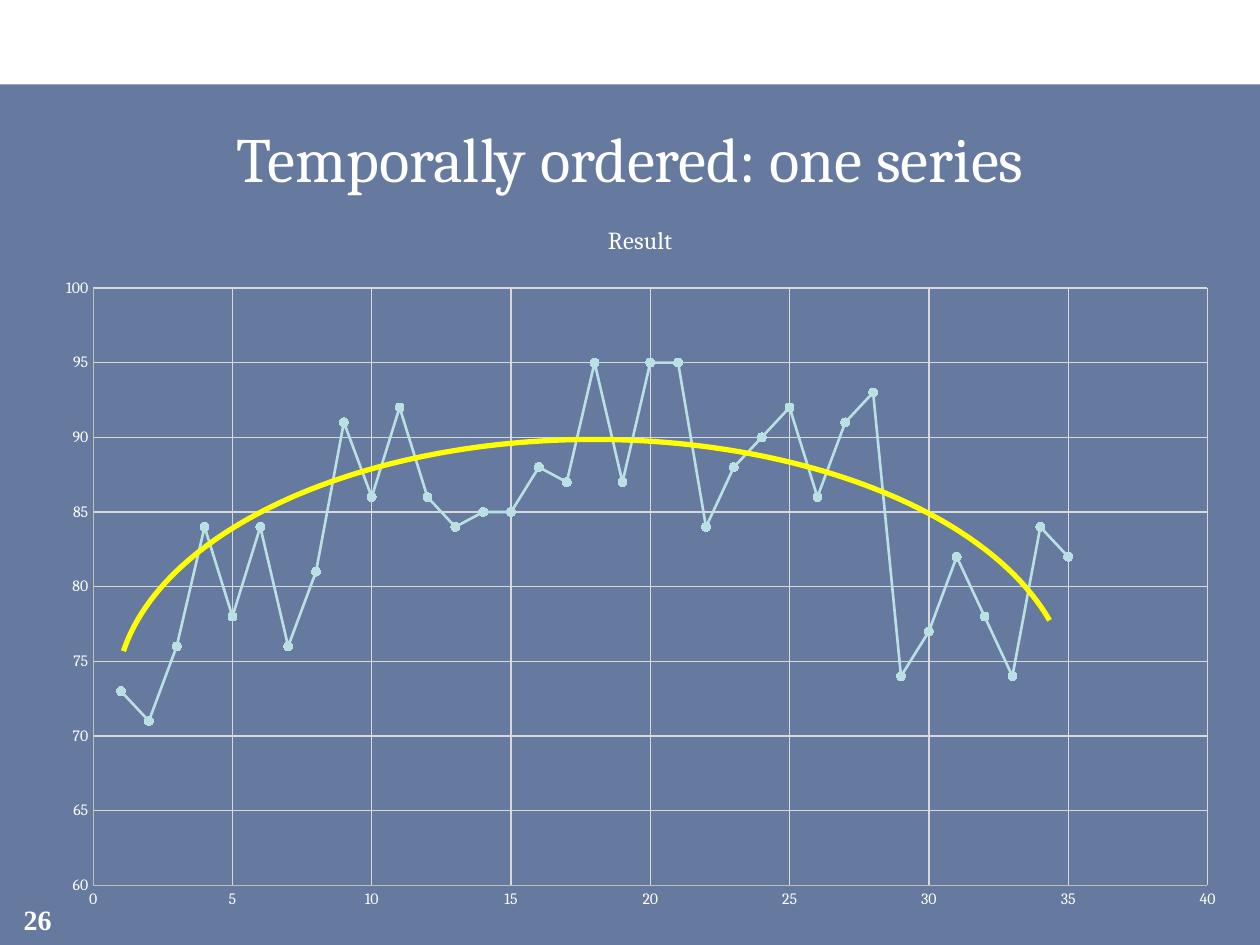
from lxml import etree
from pptx import Presentation
from pptx.chart.data import XyChartData
from pptx.dml.color import RGBColor
from pptx.enum.chart import XL_CHART_TYPE as ChartType, XL_MARKER_STYLE as Marker
from pptx.enum.chart import XL_TICK_MARK as Tick
from pptx.enum.shapes import MSO_SHAPE as Shape
from pptx.enum.text import MSO_ANCHOR as Anchor, PP_ALIGN as Align
from pptx.oxml import parse_xml
from pptx.oxml.ns import nsdecls, qn
from pptx.util import Cm, Pt

WHITE = RGBColor(0xFF, 0xFF, 0xFF)
NAVY = RGBColor(0x00, 0x20, 0x60)
AQUA = RGBColor(0xBB, 0xE0, 0xE3)
YELLOW = RGBColor(0xFF, 0xFF, 0x00)
AXIS_GRAY = RGBColor(0xBF, 0xBF, 0xBF)
GRID_GRAY = RGBColor(0xD9, 0xD9, 0xD9)

# One result per time step, starting at 1
RESULTS = [73, 71, 76, 84, 78, 84, 76, 81, 91, 86, 92, 86, 84, 85, 85, 88, 87, 95,
           87, 95, 95, 84, 88, 90, 92, 86, 91, 93, 74, 77, 82, 78, 74, 84, 82]


def set_font(font, size, name="Cambria", bold=False):
    font.name, font.size, font.bold = name, Pt(size), bold
    font.color.rgb = WHITE


def set_line(line, color, width):
    line.color.rgb = color
    line.width = Pt(width)


def add_label(slide, box, text, size, **font):
    tb = slide.shapes.add_textbox(*map(Cm, box))
    tf = tb.text_frame
    tf.word_wrap = True
    tf.vertical_anchor = Anchor.MIDDLE
    tf.margin_left = tf.margin_right = tf.margin_top = tf.margin_bottom = 0
    p = tf.paragraphs[0]
    p.text = text
    p.alignment = Align.CENTER
    set_font(p.font, size, **font)


def add_backdrop(slide, box):
    sp = slide.shapes.add_shape(Shape.RECTANGLE, *map(Cm, box))
    sp.shadow.inherit = False
    sp.fill.solid()
    sp.fill.fore_color.rgb = NAVY
    sp.line.fill.background()
    color = sp.fill._xPr.find(".//" + qn("a:srgbClr"))
    etree.SubElement(color, qn("a:alpha"), val="60000")


def style_axis(axis, low, high):
    axis.minimum_scale, axis.maximum_scale, axis.major_unit = low, high, 5
    axis.major_tick_mark = axis.minor_tick_mark = Tick.NONE
    axis.has_major_gridlines = True
    set_line(axis.major_gridlines.format.line, GRID_GRAY, 0.75)
    set_line(axis.format.line, AXIS_GRAY, 0.75)
    set_font(axis.tick_labels.font, 9)


def set_plot_layout(chart, x, y, w, h):
    area = chart._chartSpace.chart.plotArea
    for old in area.findall(qn("c:layout")):
        area.remove(old)
    area.insert(0, parse_xml(
        f'<c:layout {nsdecls("c")}><c:manualLayout><c:layoutTarget val="inner"/>'
        '<c:xMode val="edge"/><c:yMode val="edge"/>'
        f'<c:x val="{x}"/><c:y val="{y}"/><c:w val="{w}"/><c:h val="{h}"/>'
        '</c:manualLayout></c:layout>'))


def add_result_chart(slide, box):
    left, top, width, height = box
    data = XyChartData()
    points = data.add_series("Result")
    for step, result in enumerate(RESULTS, start=1):
        points.add_data_point(step, result)
    chart = slide.shapes.add_chart(ChartType.XY_SCATTER_LINES, *map(Cm, box), data).chart
    set_font(chart.font, 10)
    chart.has_legend = False
    chart.has_title = True
    p = chart.chart_title.text_frame.paragraphs[0]
    p.text = "Result"
    set_font(p.font, 14)
    style_axis(chart.category_axis, 0, 40)
    style_axis(chart.value_axis, 60, 100)
    set_plot_layout(chart, 0.043, 0.123, 0.931, 0.825)

    plot = chart.plots[0]
    plot.vary_by_categories = False
    series = plot.series[0]
    series.smooth = False
    set_line(series.format.line, AQUA, 1.5)
    series.marker.style, series.marker.size = Marker.CIRCLE, 5
    series.marker.format.fill.solid()
    series.marker.format.fill.fore_color.rgb = AQUA
    set_line(series.marker.format.line, AQUA, 0.75)

    # Trend arc over the points
    arc = slide.shapes.add_shape(Shape.ARC, Cm(left + 1.5), Cm(top + 4.85),
                                 Cm(19.25), Cm(10.36))
    arc.shadow.inherit = False
    arc.adjustments[0], arc.adjustments[1] = 111.3, 210.32
    arc.fill.background()
    set_line(arc.line, YELLOW, 3)


def main():
    prs = Presentation()
    prs.slide_width, prs.slide_height = Cm(25.4), Cm(19.05)
    slide = prs.slides.add_slide(prs.slide_layouts[6])
    add_backdrop(slide, (0, 1.7, 25.4, 17.35))
    add_label(slide, (0, 18.03, 1.52, 1.02), "26", 16, name="Times New Roman", bold=True)
    add_label(slide, (0.64, 2.11, 24.13, 2.11), "Temporally ordered: one series", 36)
    add_result_chart(slide, (0.84, 4.01, 24.13, 14.6))
    prs.save("out.pptx")


if __name__ == "__main__":
    main()
